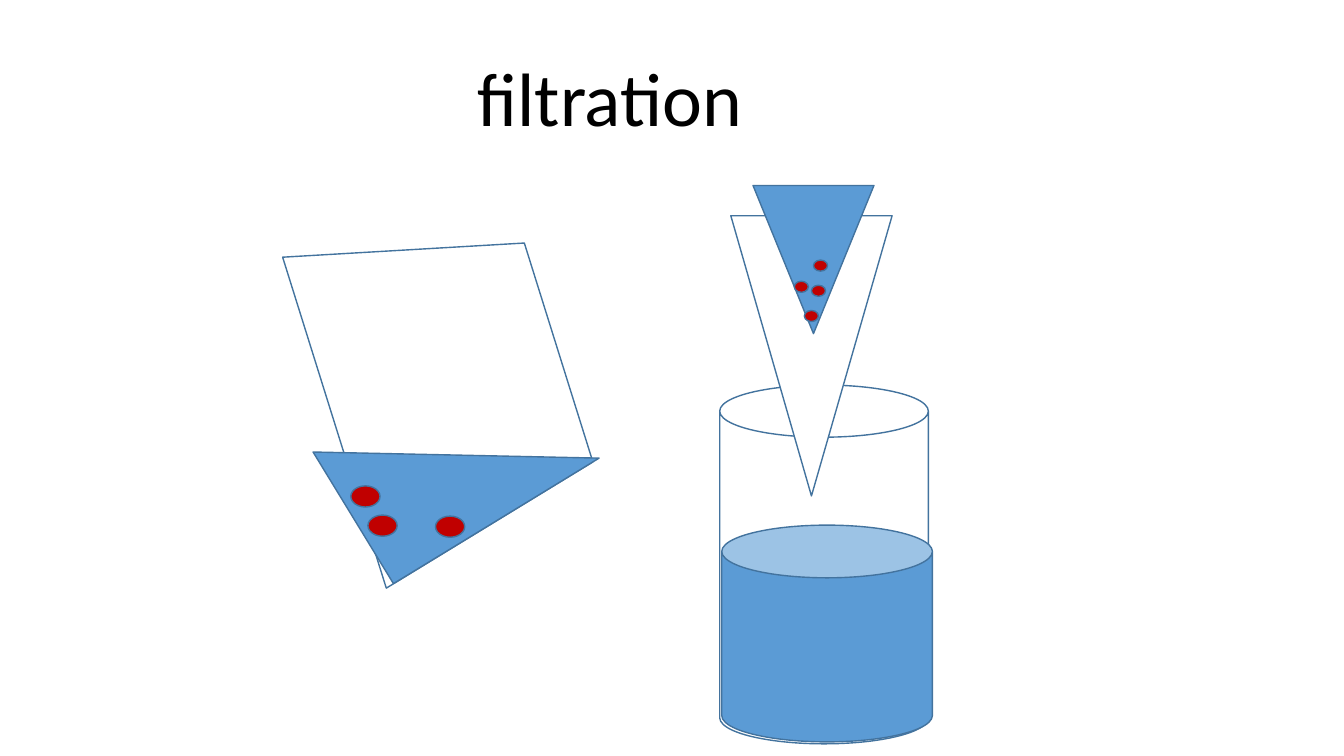
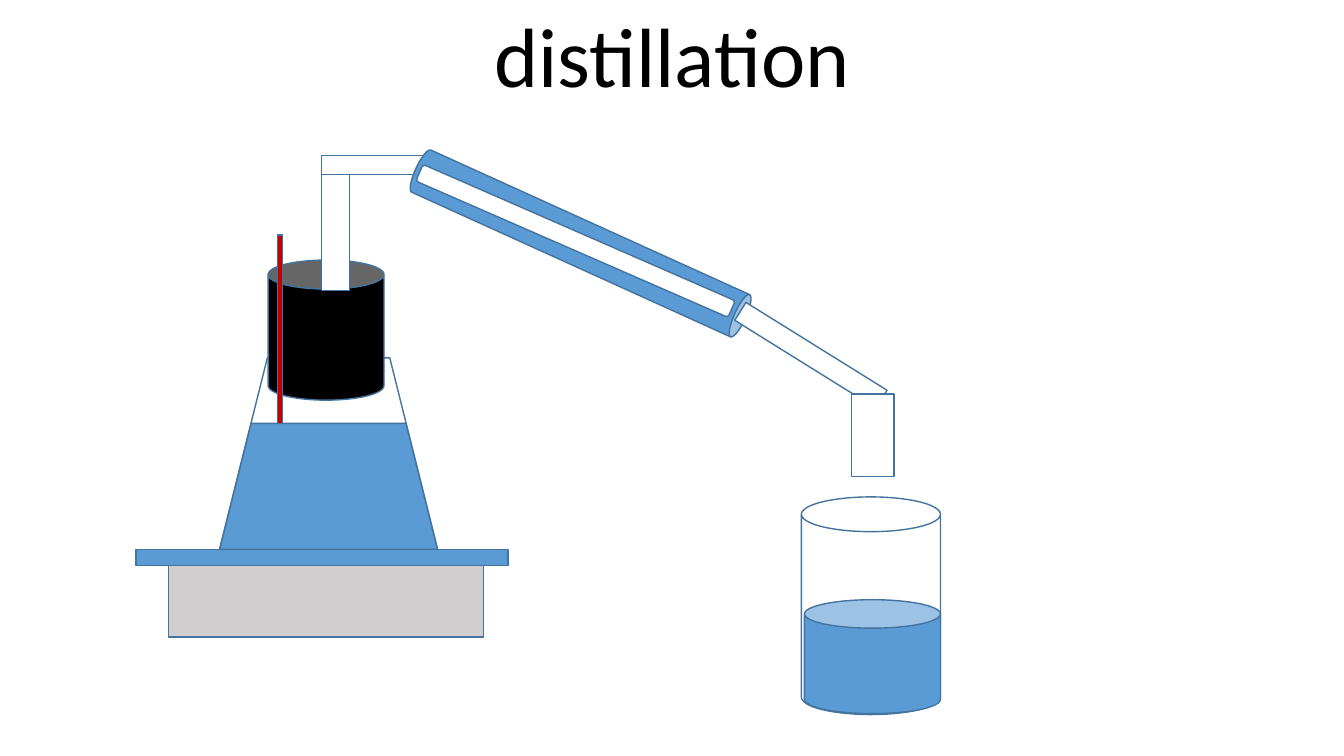
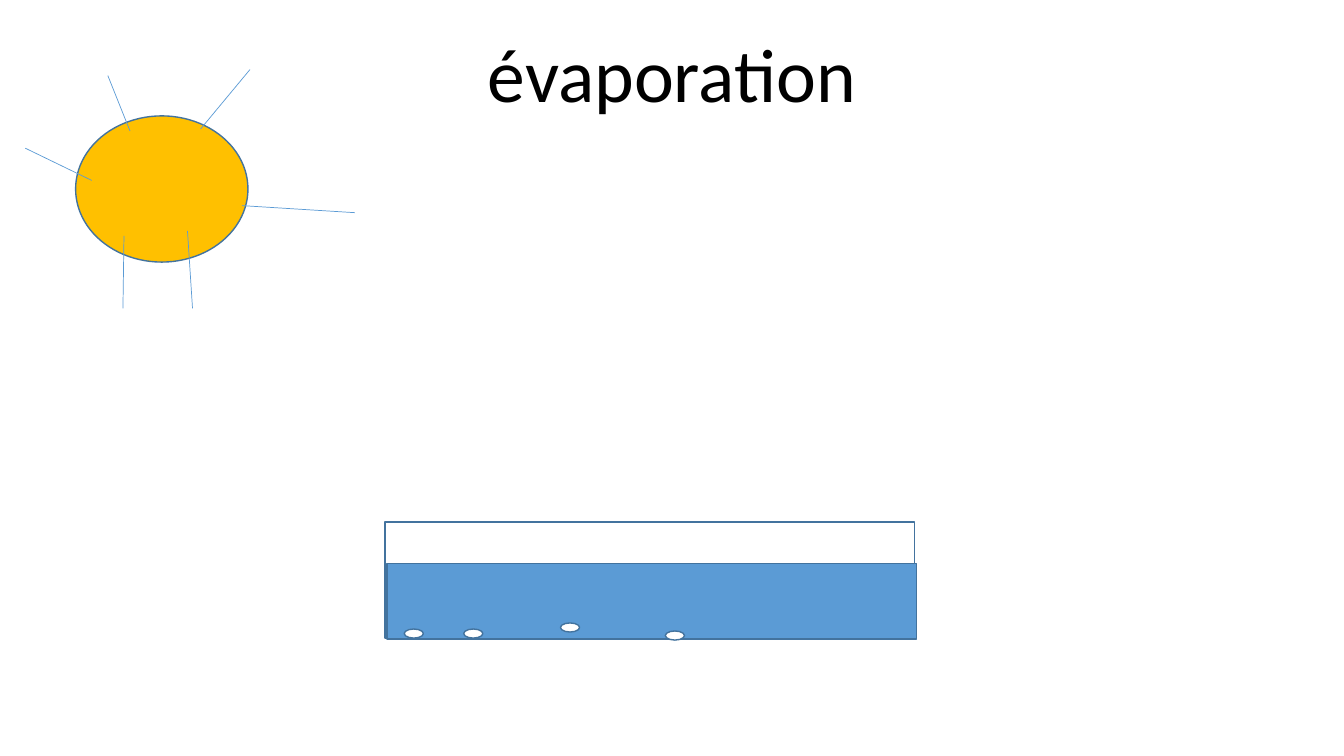
from dataclasses import dataclass
from typing import Any

from lxml import etree
from pptx import Presentation
from pptx import util as u
from pptx.dml.color import RGBColor
from pptx.enum import shapes, text
from pptx.oxml import ns

CELL = u.Inches(0.1)
SLIDE_COLUMNS, SLIDE_ROWS = 133.33, 75
TITLE_ONLY = 5
FONT = "Calibri"

BLACK = RGBColor(0x00, 0x00, 0x00)
WHITE = RGBColor(0xFF, 0xFF, 0xFF)
BLUE = RGBColor(0x5B, 0x9B, 0xD5)
OUTLINE = RGBColor(0x43, 0x73, 0x9E)
RED = RGBColor(0xC0, 0x00, 0x00)
GREY = RGBColor(0xD0, 0xCE, 0xCE)
GOLD = RGBColor(0xFF, 0xC0, 0x00)

KIND = shapes.MSO_SHAPE


def cells(*values):
    """Convert grid cells to slide lengths."""
    return [u.Emu(round(value * CELL)) for value in values]


@dataclass
class Region:
    """A box on the slide grid whose shapes are placed from its top left corner."""

    slide: Any
    left: float
    top: float
    width: float
    height: float

    def draw(self, kind, fill, left, top, width, height, rotation=0):
        """Add one filled and outlined shape."""
        place = cells(self.left + left, self.top + top, width, height)
        shape = self.slide.shapes.add_shape(kind, *place)
        shape.rotation = rotation
        shape.shadow.inherit = False
        shape.fill.solid()
        shape.fill.fore_color.rgb = fill
        shape.line.color.rgb = OUTLINE
        shape.line.width = u.Pt(1)

    def grains(self, fill, width, height, places):
        """Add equal ovals at the given places."""
        for left, top in places:
            self.draw(KIND.OVAL, fill, left, top, width, height)

    def ray(self, start_x, start_y, end_x, end_y):
        """Add one thin straight line."""
        ends = cells(self.left + start_x, self.top + start_y,
                     self.left + end_x, self.top + end_y)
        connector = self.slide.shapes.add_connector(
            shapes.MSO_CONNECTOR.STRAIGHT, *ends)
        connector.line.color.rgb = BLUE
        connector.line.width = u.Pt(0.5)
        properties = connector._element.find(ns.qn("p:spPr"))
        etree.SubElement(properties, ns.qn("a:effectLst"))


def add_titled_slide(presentation, title, size, left, top, height):
    """Add a slide with its centred title."""
    slide = presentation.slides.add_slide(presentation.slide_layouts[TITLE_ONLY])
    shape = slide.shapes.title
    shape.left, shape.top, shape.width, shape.height = cells(left, top, 100, height)
    frame = shape.text_frame
    frame.word_wrap = True
    frame.auto_size = text.MSO_AUTO_SIZE.NONE
    frame.vertical_anchor = text.MSO_ANCHOR.BOTTOM
    paragraph = frame.paragraphs[0]
    paragraph.alignment = text.PP_ALIGN.CENTER
    paragraph.line_spacing = 0.9
    run = paragraph.add_run()
    run.text = title
    run.font.name = FONT
    run.font.size = u.Pt(size)
    run.font.color.rgb = BLACK
    return slide


def draw_beaker(region, liquid):
    """Draw a beaker filling the region, with liquid inside."""
    region.draw(KIND.CAN, WHITE, 0, 0, region.width, region.height)
    region.draw(KIND.CAN, BLUE, *liquid)


def draw_pouring_vessel(region):
    """Draw the tilted vessel with the mixture to be filtered."""
    region.draw(KIND.TRAPEZOID, WHITE, 0, 0, region.width, region.height, 72.6)
    region.draw(KIND.RIGHT_TRIANGLE, BLUE, 6.2, 10.7, 23.9, 15.3, 328.6)
    region.grains(RED, 2.9, 2.1, [(7.7, 21.4), (9.4, 24.3), (16.1, 24.4)])


def draw_funnel(region):
    """Draw the funnel and the filter holding the grains."""
    region.draw(KIND.ISOSCELES_TRIANGLE, WHITE, 0, 3, region.width, 27.8, 180)
    region.draw(KIND.ISOSCELES_TRIANGLE, BLUE, 2.2, 0, 12, 14.7, 180)
    region.grains(RED, 1.4, 1.1, [(6.3, 9.5), (8.2, 7.4), (8, 9.9), (7.3, 12.4)])


def draw_heater(region):
    """Draw the heater body and its hot plate."""
    region.draw(KIND.RECTANGLE, GREY, 3.2, 1.6, 31.3, 7.1)
    region.draw(KIND.RECTANGLE, BLUE, 0, 0, region.width, 1.6)


def draw_flask(region):
    """Draw the flask, its liquid, stopper and thermometer."""
    region.draw(KIND.TRAPEZOID, WHITE, 0, 12.2, region.width, 18.9)
    region.draw(KIND.TRAPEZOID, BLUE, 0, 18.7, region.width, 12.5)
    region.draw(KIND.CAN, BLACK, 4.8, 2.5, 11.5, 13.9)
    region.draw(KIND.RECTANGLE, RED, 5.7, 0, 0.5, 18.7)


def draw_condenser(region):
    """Draw the vapour tubes, the cooling jacket and the spout."""
    region.draw(KIND.RECTANGLE, WHITE, 0, 11.1, 2.8, 11.5)
    region.draw(KIND.RECTANGLE, WHITE, 0, 9.2, 11.5, 1.9)
    region.draw(KIND.CAN, BLUE, 23.4, 0, 4.6, 35.9, 114.4)
    region.draw(KIND.ROUNDED_RECTANGLE, WHITE, 8.3, 16.8, 33.8, 1.8, 23.6)
    region.draw(KIND.RECTANGLE, WHITE, 40.3, 28, 16.5, 2.1, 31.9)
    region.draw(KIND.RECTANGLE, WHITE, 52.6, 32.9, 4.2, 8.2)


def draw_sun(region):
    """Draw the sun and its rays."""
    region.draw(KIND.OVAL, GOLD, 5, 4.6, 17.1, 14.5)
    for ends in [(0, 7.8, 6.6, 11), (8.2, 0.6, 10.4, 6.1),
                 (22.3, 0, 17.4, 5.9), (9.8, 16.5, 9.7, 23.7),
                 (16.1, 16, 16.6, 23.7), (32.7, 14.2, 21.5, 13.5)]:
        region.ray(*ends)


def draw_basin(region):
    """Draw the basin, its water and the crystals left below."""
    region.draw(KIND.RECTANGLE, WHITE, 0, 0, region.width, region.height)
    region.draw(KIND.RECTANGLE, BLUE, 0.2, 4.1, region.width, 7.5)
    region.grains(WHITE, 1.9, 0.9,
                  [(1.9, 10.6), (27.8, 10.8), (7.8, 10.6), (17.4, 10)])


def add_filtration(presentation):
    """Build the filtration slide."""
    slide = add_titled_slide(presentation, "filtration", 54, 10.5, 4.9, 9.8)
    draw_pouring_vessel(Region(slide, 27.1, 26.8, 34.4, 23.3))
    draw_beaker(Region(slide, 71.4, 38.2, 20.7, 35.6), (0.2, 13.9, 20.9, 21.5))
    draw_funnel(Region(slide, 72.5, 18.4, 16, 30.8))


def add_distillation(presentation):
    """Build the distillation slide."""
    slide = add_titled_slide(presentation, "distillation", 60, 16.67, 0, 11)
    draw_heater(Region(slide, 13.5, 54.5, 36.9, 8.7))
    draw_flask(Region(slide, 21.8, 23.3, 21.6, 31.2))
    draw_condenser(Region(slide, 31.9, 6.2, 56.8, 41.1))
    draw_beaker(Region(slide, 79.5, 49.3, 13.8, 21.6), (0.3, 10.2, 13.5, 11.3))


def add_evaporation(presentation):
    """Build the evaporation slide."""
    slide = add_titled_slide(presentation, "évaporation", 54, 16.67, 3.2, 9.1)
    draw_sun(Region(slide, 2.5, 6.9, 32.7, 23.7))
    draw_basin(Region(slide, 38.2, 51.8, 52.5, 11.5))


def main():
    """Build and save the presentation."""
    presentation = Presentation()
    presentation.slide_width, presentation.slide_height = cells(
        SLIDE_COLUMNS, SLIDE_ROWS)
    add_filtration(presentation)
    add_distillation(presentation)
    add_evaporation(presentation)
    presentation.save("out.pptx")


if __name__ == "__main__":
    main()
